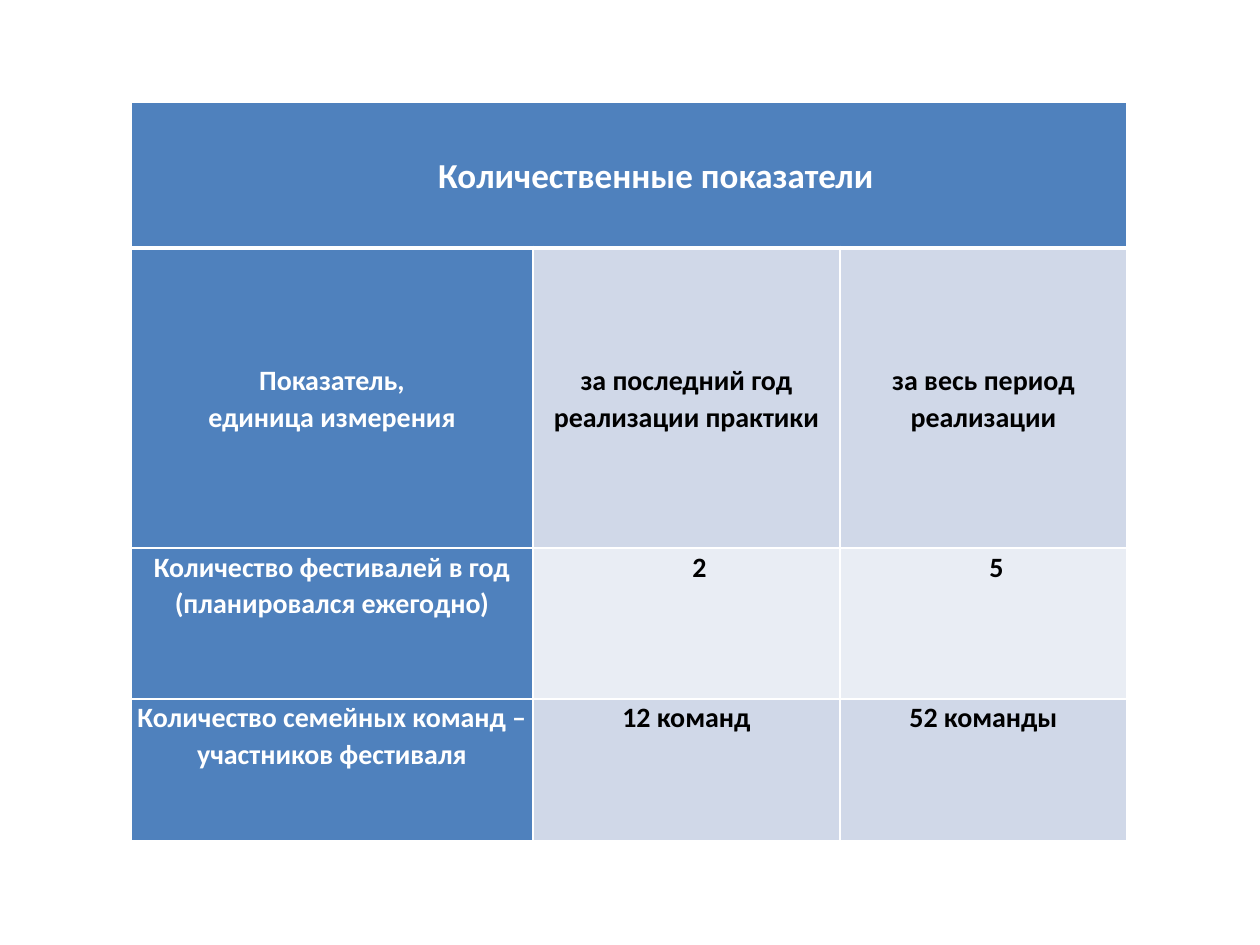
from lxml import etree
from pptx import Presentation, util as u
from pptx.dml.color import RGBColor
from pptx.enum import text
from pptx.oxml import ns

PX = u.Inches(1) // 126
COLORS = {"head": "4F81BD", "dark": "D0D8E8", "light": "E9EDF4",
          "white": "FFFFFF", "black": "000000"}
LEFT, TOP = 131, 102
COLUMNS = [402, 307, 287]
HEIGHTS = [146, 300, 151, 142]
TITLE_INDENT, NUMBER_INDENT = 54, 26
ROWS = [
    ["Количественные показатели", "", ""],
    ["Показатель,\nединица измерения", "за последний год реализации практики",
     "за весь период реализации"],
    ["Количество фестивалей в год (планировался ежегодно)", "2", "5"],
    ["Количество семейных команд –участников фестиваля", "12 команд", "52 команды"],
]


def set_borders(cell, widths):
    properties = cell._tc.get_or_add_tcPr()
    for side, width in widths.items():
        line = etree.SubElement(properties, ns.qn(f"a:ln{side}"), w=str(u.Pt(width)))
        fill = etree.SubElement(line, ns.qn("a:solidFill"))
        etree.SubElement(fill, ns.qn("a:srgbClr"), val=COLORS["white"])


def format_cell(cell, words, row, column):
    is_head = row == 0 or column == 0
    set_borders(cell, {"L": 1, "R": 1, "T": 3 if row == 1 else 1,
                       "B": 3 if row == 0 else 1})
    cell.fill.solid()
    shade = "head" if is_head else "light" if row == 2 else "dark"
    cell.fill.fore_color.rgb = RGBColor.from_string(COLORS[shade])
    cell.margin_right = cell.margin_top = cell.margin_bottom = 0
    indent = TITLE_INDENT if row == 0 else NUMBER_INDENT if words.isdigit() else 0
    cell.margin_left = indent * PX
    cell.vertical_anchor = (text.MSO_ANCHOR.MIDDLE if row < 2
                            else text.MSO_ANCHOR.TOP)
    cell.text_frame.text = words
    for para in cell.text_frame.paragraphs:
        para.alignment = text.PP_ALIGN.CENTER
        para.line_spacing = 1.07
        para.font.name = "Calibri"
        para.font.size = u.Pt(20 if row == 0 else 16)
        para.font.bold = True
        ink = "white" if is_head else "black"
        para.font.color.rgb = RGBColor.from_string(COLORS[ink])


def main():
    deck = Presentation()
    deck.slide_width, deck.slide_height = 1260 * PX, 945 * PX
    page = deck.slides.add_slide(deck.slide_layouts[6])
    table = page.shapes.add_table(
        len(ROWS), len(COLUMNS), LEFT * PX, TOP * PX,
        sum(COLUMNS) * PX, sum(HEIGHTS) * PX).table
    for column, width in zip(table.columns, COLUMNS):
        column.width = width * PX
    for row, height in zip(table.rows, HEIGHTS):
        row.height = height * PX
    for i, row in enumerate(ROWS):
        for j, words in enumerate(row):
            format_cell(table.cell(i, j), words, i, j)
    table.cell(0, 0).merge(table.cell(0, len(COLUMNS) - 1))
    deck.save("out.pptx")


if __name__ == "__main__":
    main()
